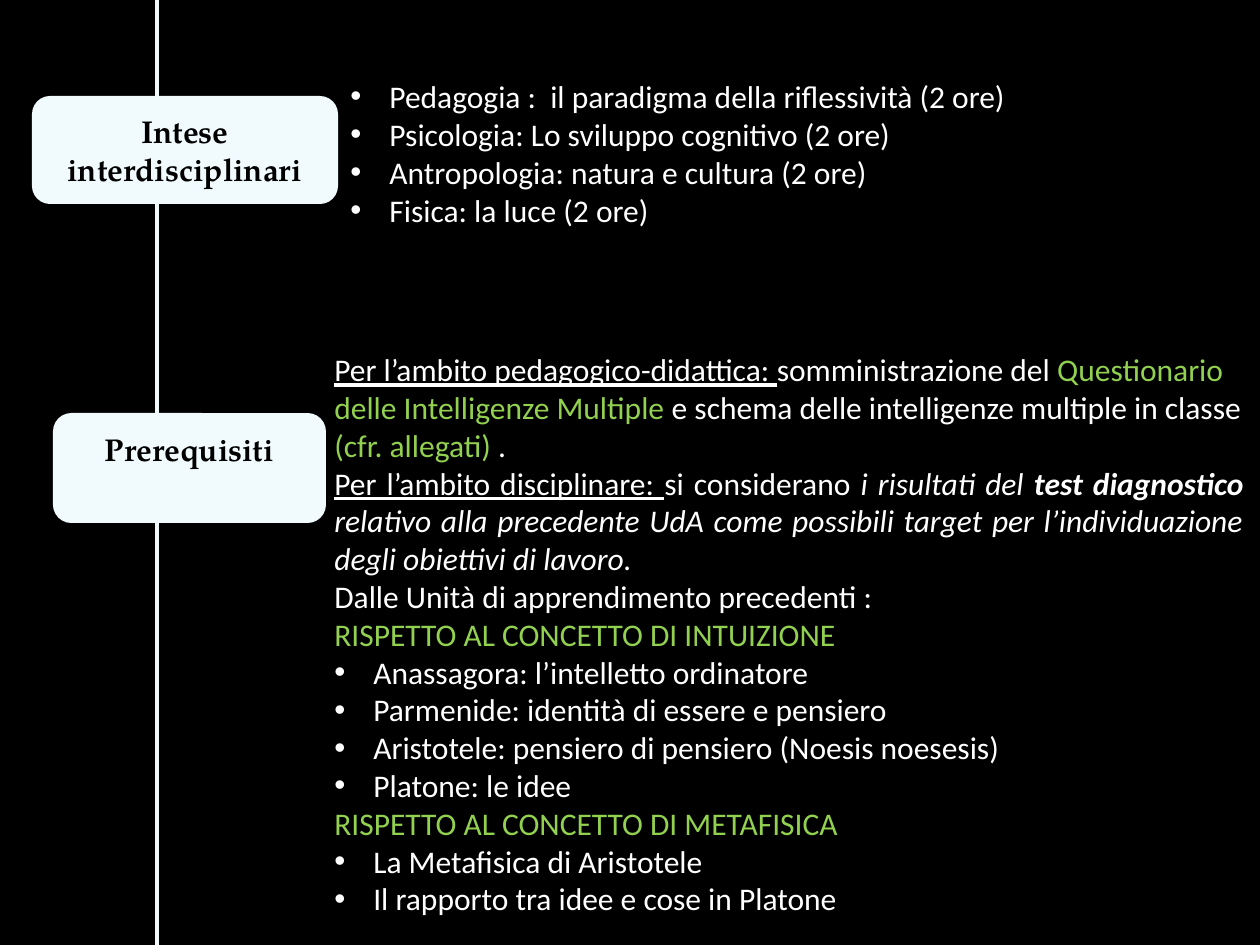
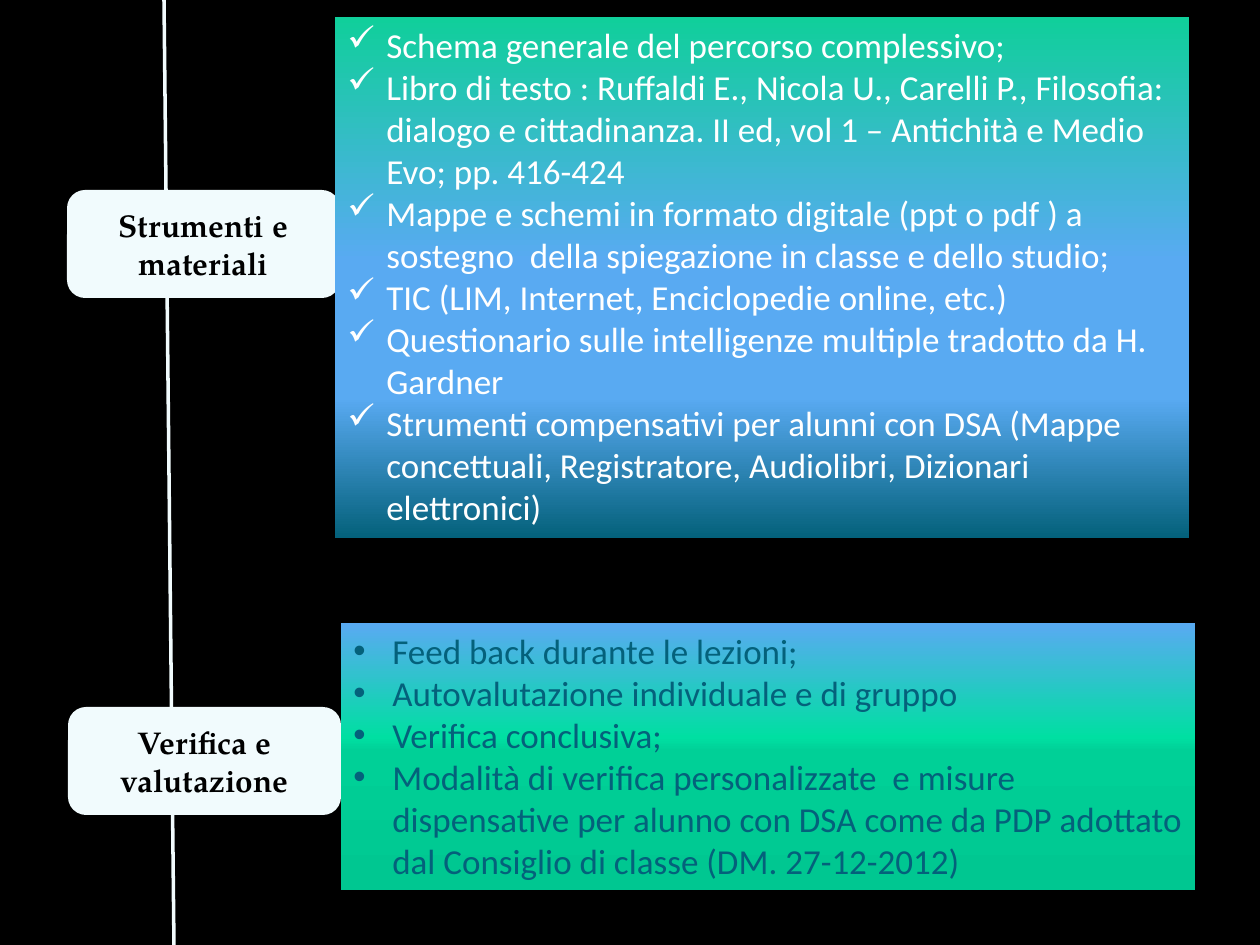
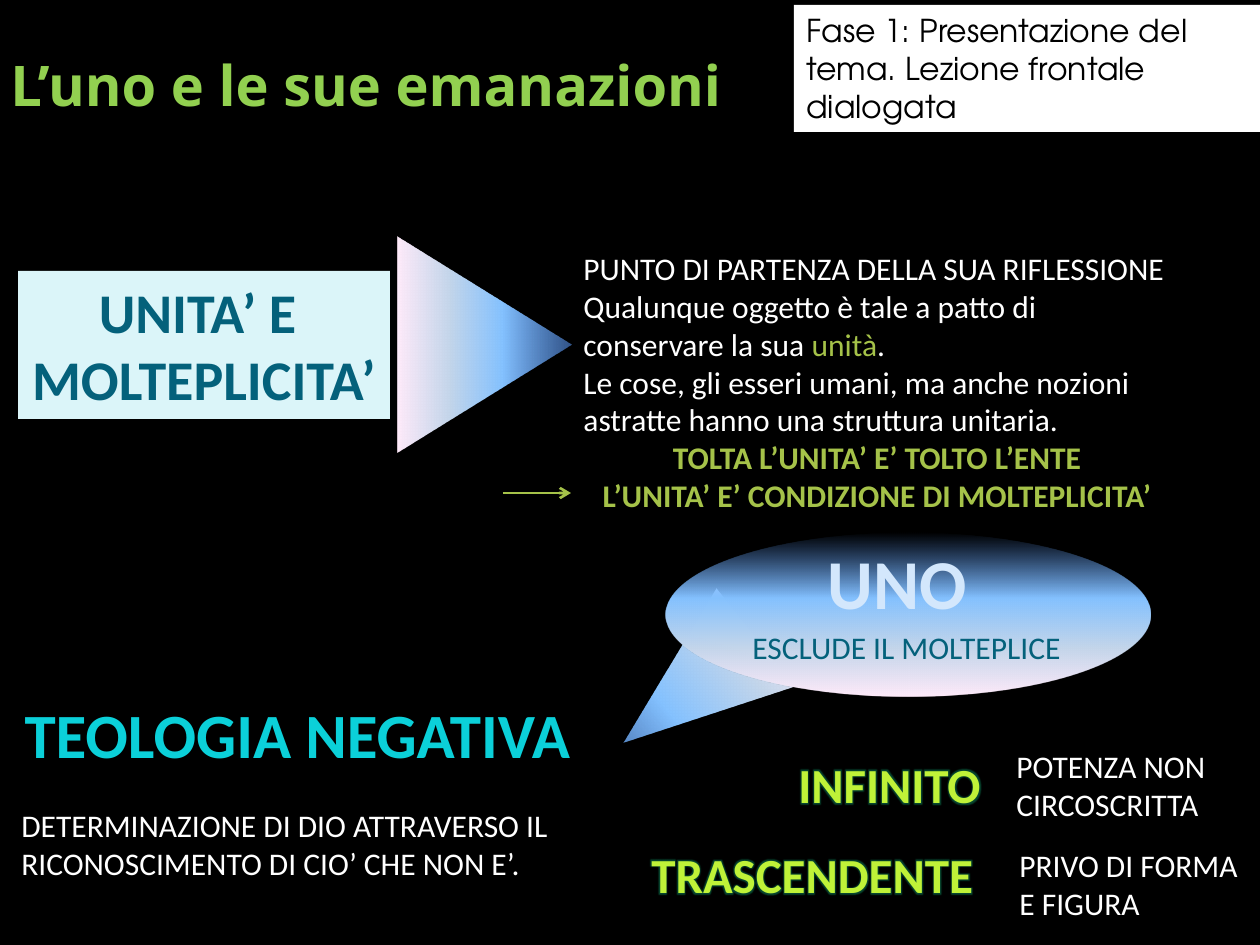
import pptx
import pptx.dml.color
import pptx.enum.dml
import pptx.enum.shapes
import pptx.enum.text
import pptx.oxml
import pptx.oxml.ns
import pptx.util

SHAPES = pptx.enum.shapes.MSO_SHAPE
ALIGN = pptx.enum.text.PP_ALIGN
ANCHOR = pptx.enum.text.MSO_ANCHOR
AUTO_SIZE = pptx.enum.text.MSO_AUTO_SIZE

BLACK, WHITE, ICE = "000000", "FFFFFF", "F1FBFD"
GREEN, OLIVE, TEAL, LIME = "92D050", "A5C249", "04617B", "BFF238"
BODY, LABEL, HEADING, STAGE = "Calibri", "TeX Gyre Pagella", "Noto Sans", "TeX Gyre Adventor"
INDENT = 39
MATERIALS_STOPS = [(0, "10CF9B"), (47, "59AAF2"), (73, "59AAF2"), (100, TEAL)]
ASSESSMENT_STOPS = [(0, "59AAF2"), (43, "00DFA2"), (48, "00D097"), (100, "00C791")]
SKY_STOPS = [(40, "85C2FF"), (70, "C4D6EB"), (100, "FFEBFA")]


def px(length):
    """Turn pixels into EMU."""
    return pptx.util.Emu(round(length * 914400 / 126))


def rgb(value):
    """Turn a hex string into a colour."""
    return pptx.dml.color.RGBColor.from_string(value)


def xml(tag, body="", attributes=""):
    """Build one drawing element."""
    return pptx.oxml.parse_xml(
        f'<a:{tag} {pptx.oxml.ns.nsdecls("a")} {attributes}>{body}</a:{tag}>')


def fill_gradient(shape, stops):
    """Fill a shape from top to bottom with (position, colour, opacity) stops."""
    shape.fill.gradient()
    shape.fill.gradient_angle = 270
    stop_list = shape._element.spPr.find(".//" + pptx.oxml.ns.qn("a:gsLst"))
    for stop in list(stop_list):
        stop_list.remove(stop)
    for position, color, *opacity in stops:
        alpha = f'<a:alpha val="{opacity[0] * 1000}"/>' if opacity else ""
        stop_list.append(xml("gs", f'<a:srgbClr val="{color}">{alpha}</a:srgbClr>',
                             f'pos="{position * 1000}"'))


def add_shape(slide, kind, box, fill, rotation=0):
    """Add a borderless shape filled with a colour or gradient stops."""
    shape = slide.shapes.add_shape(kind, *map(px, box))
    shape.shadow.inherit = False
    shape.line.fill.background()
    shape.rotation = rotation
    if isinstance(fill, str):
        shape.fill.solid()
        shape.fill.fore_color.rgb = rgb(fill)
    else:
        fill_gradient(shape, fill)
    return shape


def add_line(slide, start, end, color, width, arrow=False):
    """Add a straight line, with an open arrowhead if asked."""
    line = slide.shapes.add_connector(
        pptx.enum.shapes.MSO_CONNECTOR.STRAIGHT, *map(px, start + end))
    line.line.color.rgb = rgb(color)
    line.line.width = pptx.util.Pt(width)
    if arrow:
        line.line._get_or_add_ln().append(xml("tailEnd", attributes='type="arrow"'))
    line._element.spPr.append(xml("effectLst"))


def text_line(*runs, align=ALIGN.LEFT, bullet=None):
    """Describe a paragraph whose runs are strings or (string, style) pairs."""
    pairs = [(run, {}) if isinstance(run, str) else run for run in runs]
    return pairs, align, bullet


def bullets(mark, *texts):
    """Describe a bulleted list."""
    return [text_line(text, bullet=mark) for text in texts]


def set_bullet(paragraph, mark):
    """Give a paragraph a hanging bullet."""
    properties = paragraph._p.get_or_add_pPr()
    properties.set("marL", str(px(INDENT)))
    properties.set("indent", str(-px(INDENT)))
    if mark == "•":
        properties.append(xml("buFont", attributes='typeface="Arial"'))
    properties.append(xml("buChar", attributes=f'char="{mark}"'))


def write(shape, lines, size=18, font=BODY, color=WHITE, bold=False,
          anchor=ANCHOR.TOP, wrap=True, fit=True):
    """Write paragraphs into a shape run by run."""
    frame = shape.text_frame
    frame.word_wrap = wrap
    frame.vertical_anchor = anchor
    frame.auto_size = AUTO_SIZE.SHAPE_TO_FIT_TEXT if fit else AUTO_SIZE.NONE
    for index, (runs, align, mark) in enumerate(lines):
        paragraph = frame.add_paragraph() if index else frame.paragraphs[0]
        paragraph.alignment = align
        if mark:
            set_bullet(paragraph, mark)
        for text, style in runs:
            run = paragraph.add_run()
            run.text = text
            run.font.name = font
            run.font.size = pptx.util.Pt(size)
            run.font.color.rgb = rgb(style.get("color", color))
            run.font.bold = style.get("bold", bold)
            run.font.italic = style.get("italic", False)
            run.font.underline = style.get("underline", False)


def add_text(slide, box, lines, **style):
    """Add a text box."""
    shape = slide.shapes.add_textbox(*map(px, box))
    write(shape, lines, **style)
    return shape


def add_label(slide, box, text, bottom_inset=6):
    """Add a rounded section label."""
    label = add_shape(slide, SHAPES.ROUNDED_RECTANGLE, box, ICE)
    write(label, [text_line(text, align=ALIGN.CENTER)], font=LABEL, color=BLACK,
          bold=True, anchor=ANCHOR.MIDDLE, fit=False)
    label.text_frame.margin_bottom = px(bottom_inset)


def add_panel(slide, box, stops, lines, color):
    """Add a gradient panel holding a list."""
    write(add_shape(slide, SHAPES.RECTANGLE, box, stops), lines, size=20, color=color)


def add_glowing_word(slide, box, text, wrap):
    """Add a bright word with a green glow."""
    word = add_text(slide, box, [text_line(text)], size=28, color=LIME, bold=True, wrap=wrap)
    glow = '<a:glow rad="45000"><a:srgbClr val="0F8F60"><a:alpha val="50000"/></a:srgbClr></a:glow>'
    properties = word.text_frame.paragraphs[0].runs[0].font._element
    properties.find(pptx.oxml.ns.qn("a:solidFill")).addnext(xml("effectLst", glow))


def add_slide(presentation):
    """Add a blank black slide."""
    slide = presentation.slides.add_slide(presentation.slide_layouts[6])
    slide.background.fill.solid()
    slide.background.fill.fore_color.rgb = rgb(BLACK)
    return slide


def build_prerequisites(slide):
    """Build the slide on shared topics and prerequisites."""
    green, underline, italic = {"color": GREEN}, {"underline": True}, {"italic": True}
    add_text(slide, (338, 71, 852, 164), bullets(
        "•",
        "Pedagogia :  il paradigma della riflessività (2 ore)",
        "Psicologia: Lo sviluppo cognitivo (2 ore)",
        "Antropologia: natura e cultura (2 ore)",
        "Fisica: la luce (2 ore)"))
    add_line(slide, (157, 0), (157, 945), ICE, 2)
    add_label(slide, (53, 413, 273, 110), "Prerequisiti", bottom_inset=44)
    add_text(slide, (322, 344, 934, 585), [
        text_line(("Per l’ambito pedagogico-didattica: ", underline),
                  "somministrazione del ",
                  ("Questionario delle Intelligenze Multiple ", green),
                  "e schema delle intelligenze multiple in classe ",
                  ("(cfr. allegati) ", green), "."),
        text_line(("Per l’ambito disciplinare: ", underline), "si considerano ",
                  ("i risultati del ", italic),
                  ("test diagnostico ", {"italic": True, "bold": True}),
                  ("relativo alla precedente UdA come possibili target per "
                   "l’individuazione degli obiettivi di lavoro.", italic),
                  align=ALIGN.JUSTIFY),
        text_line("Dalle Unità di apprendimento precedenti : ", align=ALIGN.JUSTIFY),
        text_line(("RISPETTO AL CONCETTO DI INTUIZIONE", green)),
        *bullets("•",
                 "Anassagora: l’intelletto ordinatore",
                 "Parmenide: identità di essere e pensiero",
                 "Aristotele: pensiero di pensiero (Noesis noesesis)",
                 "Platone: le idee"),
        text_line(("RISPETTO AL CONCETTO DI METAFISICA", green)),
        *bullets("•",
                 "La Metafisica di Aristotele",
                 "Il rapporto tra idee e cose in Platone")])
    add_label(slide, (32, 96, 306, 108), "Intese interdisciplinari")


def build_materials(slide):
    """Build the slide on materials and assessment."""
    add_line(slide, (164, 0), (174, 945), ICE, 2)
    add_label(slide, (68, 707, 273, 108), "Verifica e valutazione")
    add_panel(slide, (341, 623, 854, 267), ASSESSMENT_STOPS, bullets(
        "•",
        "Feed back durante le lezioni;",
        "Autovalutazione individuale e di gruppo",
        "Verifica conclusiva;",
        "Modalità di verifica personalizzate  e misure dispensative per alunno con DSA "
        "come da PDP adottato dal Consiglio di classe (DM. 27-12-2012)"), TEAL)
    add_label(slide, (67, 190, 273, 108), "Strumenti e materiali")
    add_panel(slide, (335, 17, 854, 521), MATERIALS_STOPS, bullets(
        "✓",
        "Schema generale del percorso complessivo;",
        "Libro di testo : Ruffaldi E., Nicola U., Carelli P., Filosofia: dialogo e "
        "cittadinanza. II ed, vol 1 – Antichità e Medio Evo; pp. 416-424",
        "Mappe e schemi in formato digitale (ppt o pdf ) a sostegno  della spiegazione "
        "in classe e dello studio;",
        "TIC (LIM, Internet, Enciclopedie online, etc.)",
        "Questionario sulle intelligenze multiple tradotto da H. Gardner",
        "Strumenti compensativi per alunni con DSA (Mappe concettuali, Registratore, "
        "Audiolibri, Dizionari elettronici)"), WHITE)


def build_unity(slide):
    """Build the heading and the part on unity and multiplicity."""
    add_text(slide, (-2, 5, 965, 158), [text_line("L’uno e le sue emanazioni")],
             size=32, font=HEADING, color=GREEN, bold=True, anchor=ANCHOR.MIDDLE, fit=False)
    stage = add_shape(slide, SHAPES.RECTANGLE, (794, 5, 466, 127), WHITE)
    write(stage, [text_line("Fase 1: Presentazione del tema. Lezione frontale dialogata")],
          font=STAGE, color=BLACK)
    add_shape(slide, SHAPES.ISOSCELES_TRIANGLE, (377, 258, 215, 173),
              [(0, "5E9EFF", 52)] + SKY_STOPS, rotation=90)
    theme = add_shape(slide, SHAPES.RECTANGLE, (18, 271, 372, 148), "DBF5F9")
    write(theme, [text_line("UNITA’ E ", align=ALIGN.CENTER),
                  text_line("MOLTEPLICITA’", align=ALIGN.CENTER)],
          size=32, color=TEAL, bold=True, wrap=False)
    conclusion = {"color": OLIVE, "bold": True}
    add_text(slide, (571, 243, 612, 280), [
        text_line("PUNTO DI PARTENZA DELLA SUA RIFLESSIONE"),
        text_line("Qualunque oggetto è tale a patto di conservare la sua ",
                  ("unità", {"color": OLIVE}), "."),
        text_line("Le cose, gli esseri umani, ma anche nozioni astratte hanno una "
                  "struttura unitaria."),
        text_line(("TOLTA L’UNITA’ E’ TOLTO L’ENTE", conclusion), align=ALIGN.CENTER),
        text_line(("L’UNITA’ E’ CONDIZIONE DI MOLTEPLICITA’", conclusion),
                  align=ALIGN.CENTER)])
    add_line(slide, (503, 493), (571, 493), OLIVE, 1.5, arrow=True)


def build_theology(slide):
    """Build the part on the One and negative theology."""
    add_shape(slide, SHAPES.ISOSCELES_TRIANGLE, (627, 606, 125, 168),
              [(0, "5E9EFF", 52)] + SKY_STOPS, rotation=231.4)
    add_shape(slide, SHAPES.OVAL, (666, 533, 484, 164), [(0, "5E9EFF", 0)] + SKY_STOPS)
    add_text(slide, (814, 533, 166, 97), [text_line("UNO", align=ALIGN.CENTER)],
             size=40, color="D3E7FC", bold=True, wrap=False)
    add_text(slide, (740, 622, 336, 50), [text_line("ESCLUDE IL MOLTEPLICE")],
             color=TEAL, wrap=False)
    add_text(slide, (9, 689, 577, 89), [text_line("TEOLOGIA NEGATIVA", align=ALIGN.CENTER)],
             size=36, color="0BD0D9", bold=True, wrap=False)
    add_text(slide, (9, 800, 577, 89), [text_line(
        "DETERMINAZIONE DI DIO ATTRAVERSO IL RICONOSCIMENTO DI CIO’ CHE NON E’.")])
    add_glowing_word(slide, (786, 748, 218, 72), "INFINITO", wrap=True)
    add_text(slide, (1004, 741, 223, 89),
             [text_line("POTENZA NON"), text_line("CIRCOSCRITTA")], wrap=False)
    add_glowing_word(slide, (639, 838, 350, 72), "TRASCENDENTE", wrap=False)
    add_text(slide, (1007, 840, 253, 89),
             [text_line("PRIVO DI FORMA"), text_line("E FIGURA")], wrap=False)


def main():
    """Build and save the presentation."""
    presentation = pptx.Presentation()
    presentation.slide_width = px(1260)
    presentation.slide_height = px(945)
    build_prerequisites(add_slide(presentation))
    build_materials(add_slide(presentation))
    emanations = add_slide(presentation)
    build_theology(emanations)
    build_unity(emanations)
    presentation.save("out.pptx")


if __name__ == "__main__":
    main()
